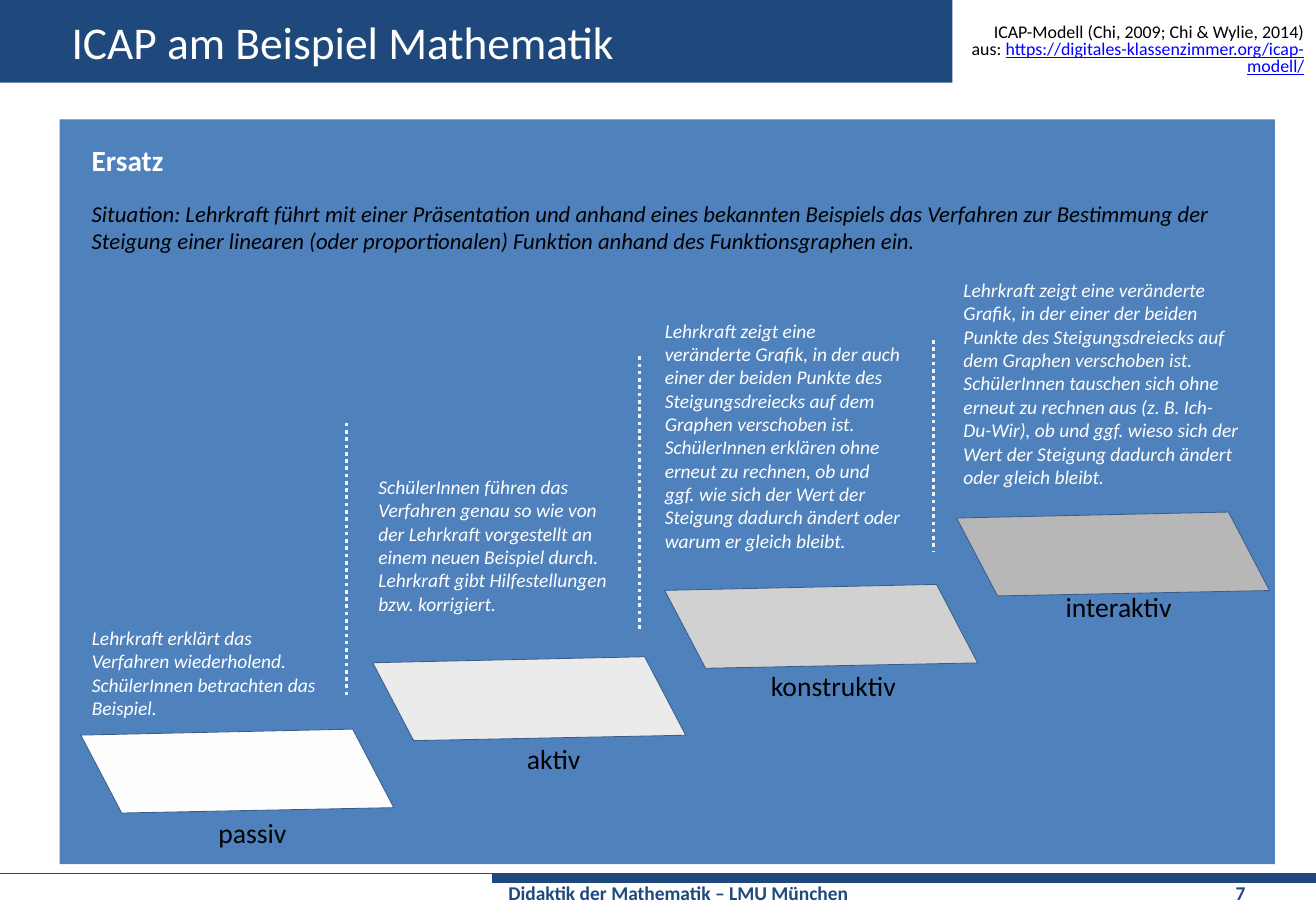
import dataclasses

import lxml.etree
import pptx
import pptx.dml.color
import pptx.enum.dml
import pptx.enum.shapes
import pptx.enum.text
import pptx.oxml.ns
import pptx.util

Pt = pptx.util.Pt
qn = pptx.oxml.ns.qn
ALIGN = pptx.enum.text.PP_ALIGN
ANCHOR = pptx.enum.text.MSO_ANCHOR
FONT = "Calibri"
SLIDE_WIDTH = 810.75
SLIDE_HEIGHT = 567
COLORS = {
    "navy": "1F497D",
    "panel": "4F81BD",
    "white": "FFFFFF",
    "black": "000000",
    "link": "0000FF",
    "dots": "F2F2F2",
    "edge": "385D8A",
    "passive": "FDFDFD",
    "active": "EBEBEB",
    "constructive": "D1D1D1",
    "interactive": "B7B7B7",
}
FIRST_STEP = (49.8, 453.1)
STEP_SHIFT = (179.85, -44.6)
TILE_CORNERS = [(0, 0), (167.5, -3.7), (192.8, 44.7), (25.2, 48)]

Box = tuple[float, float, float, float]


@dataclasses.dataclass
class Stage:
    label: str
    label_box: Box
    fill: str
    description: str
    description_box: Box


@dataclasses.dataclass
class Divider:
    x: float
    top: float
    bottom: float


STAGES = [
    Stage("passiv", (127.4, 499.5, 56.9, 28.1), "passive",
          "Lehrkraft erklärt das Verfahren wiederholend.\n"
          "SchülerInnen betrachten das Beispiel.",
          (49.5, 382.3, 160.6, 79.9)),
    Stage("aktiv", (317.5, 453.6, 48.2, 28.1), "active",
          "SchülerInnen führen das Verfahren genau so wie von der Lehrkraft "
          "vorgestellt an einem neuen Beispiel durch.\n"
          "Lehrkraft gibt Hilfestellungen bzw. korrigiert.",
          (226.1, 289.2, 160.6, 94.3)),
    Stage("konstruktiv", (467.8, 408.7, 92.2, 28.1), "constructive",
          "Lehrkraft zeigt eine veränderte Grafik, in der auch einer der beiden "
          "Punkte des Steigungsdreiecks auf dem Graphen verschoben ist.\n"
          "SchülerInnen erklären ohne erneut zu rechnen, ob und ggf. wie sich der "
          "Wert der Steigung dadurch ändert oder warum er gleich bleibt.",
          (402.5, 192.8, 160.6, 167)),
    Stage("interaktiv", (649.4, 360, 80.6, 28.1), "interactive",
          "Lehrkraft zeigt eine veränderte Grafik, in der einer der beiden Punkte "
          "des Steigungsdreiecks auf dem Graphen verschoben ist.\n"
          "SchülerInnen tauschen sich ohne erneut zu rechnen aus (z. B. Ich-Du-Wir), "
          "ob und ggf. wieso sich der Wert der Steigung dadurch ändert oder gleich "
          "bleibt.",
          (586.5, 167.8, 183.6, 138.2)),
]
DIVIDERS = [
    Divider(213.4, 260.6, 429.1),
    Divider(394, 219.6, 388.1),
    Divider(575.1, 209.5, 339.8),
]


def rgb(name: str) -> pptx.dml.color.RGBColor:
    return pptx.dml.color.RGBColor.from_string(COLORS[name])


def add_bar(slide, box: Box, fill: str) -> None:
    bar = slide.shapes.add_shape(
        pptx.enum.shapes.MSO_SHAPE.RECTANGLE, *map(Pt, box))
    bar.shadow.inherit = False
    bar.fill.solid()
    bar.fill.fore_color.rgb = rgb(fill)
    bar.line.fill.background()


def add_rule(slide, start: tuple[float, float], end: tuple[float, float],
             color: str, width: float, dotted: bool = False) -> None:
    rule = slide.shapes.add_connector(
        pptx.enum.shapes.MSO_CONNECTOR.STRAIGHT, *map(Pt, start + end))
    rule.line.color.rgb = rgb(color)
    rule.line.width = Pt(width)
    if dotted:
        rule.line.dash_style = pptx.enum.dml.MSO_LINE.ROUND_DOT
    lxml.etree.SubElement(rule._element.spPr, qn("a:effectLst"))


def add_tile(slide, index: int, fill: str) -> None:
    left, top = (a + index * b for a, b in zip(FIRST_STEP, STEP_SHIFT))
    corners = [(Pt(left + x), Pt(top + y)) for x, y in TILE_CORNERS]
    outline = slide.shapes.build_freeform(*corners[0])
    outline.add_line_segments(corners[1:], close=True)
    tile = outline.convert_to_shape()
    tile.shadow.inherit = False
    tile.fill.solid()
    tile.fill.fore_color.rgb = rgb(fill)
    tile.line.color.rgb = rgb("edge")
    tile.line.width = Pt(0.5)


def add_text(slide, text: str, box: Box, *, size: float, color: str = "black",
             bold: bool = False, italic: bool = False, wrap: bool = True,
             anchor=ANCHOR.TOP, align=ALIGN.LEFT, spacing: float = 1.0,
             hanging: float = 0, tab: float = 0, link: str = "") -> None:
    frame = slide.shapes.add_textbox(*map(Pt, box)).text_frame
    frame.word_wrap = wrap
    frame.vertical_anchor = anchor
    lines = text.split("\n")
    for number, content in enumerate(lines):
        paragraph = frame.add_paragraph() if number else frame.paragraphs[0]
        paragraph.alignment = align
        paragraph.line_spacing = spacing
        properties = paragraph._p.get_or_add_pPr()
        if hanging:
            properties.set("marL", str(Pt(hanging)))
            properties.set("indent", str(-Pt(hanging)))
        if tab:
            stops = lxml.etree.SubElement(properties, qn("a:tabLst"))
            lxml.etree.SubElement(stops, qn("a:tab"), pos=str(Pt(tab)), algn="l")
        pieces = [(content, color, False)]
        if link and number == len(lines) - 1:
            pieces.append((link, "link", True))
        for piece, piece_color, underlined in pieces:
            run = paragraph.add_run()
            run.text = piece
            run.font.name = FONT
            run.font.size = Pt(size)
            run.font.bold = bold
            run.font.italic = italic
            run.font.underline = underlined
            run.font.color.rgb = rgb(piece_color)


def main() -> None:
    deck = pptx.Presentation()
    deck.slide_width = Pt(SLIDE_WIDTH)
    deck.slide_height = Pt(SLIDE_HEIGHT)
    slide = deck.slides.add_slide(deck.slide_layouts[6])

    add_bar(slide, (0, 0, 586.8, 51), "navy")
    add_rule(slide, (0, 538.4), (SLIDE_WIDTH, 538.4), "navy", 1)
    add_bar(slide, (303.2, 538.4, SLIDE_WIDTH - 303.2, 5.8), "navy")
    add_text(slide, " Didaktik der Mathematik – LMU München\t7",
             (303.4, 539.3, 507.3, 22.3), size=12, color="navy", bold=True, tab=450.7)
    add_bar(slide, (36.8, 73.6, 748.6, 459), "panel")
    add_text(slide, "ICAP am Beispiel Mathematik", (37, 0, 544.3, 51),
             size=28, color="white", anchor=ANCHOR.MIDDLE)
    add_text(slide, "ICAP-Modell (Chi, 2009; Chi & Wylie, 2014)\naus: ",
             (581, 5.6, 229.7, 51), size=11, anchor=ANCHOR.MIDDLE,
             align=ALIGN.RIGHT, spacing=0.8, hanging=28.1,
             link="https://digitales-klassenzimmer.org/icap-modell/")
    add_text(slide, "Ersatz", (49.4, 84.2, 59, 28.8),
             size=18, color="white", bold=True, wrap=False)
    add_text(slide, "Situation: Lehrkraft führt mit einer Präsentation und anhand eines "
             "bekannten Beispiels das Verfahren zur Bestimmung der Steigung einer "
             "linearen (oder proportionalen) Funktion anhand des Funktionsgraphen ein.",
             (49.4, 119.3, 720.7, 41), size=14, italic=True)

    for divider in DIVIDERS:
        add_rule(slide, (divider.x, divider.top), (divider.x, divider.bottom),
                 "dots", 2.25, dotted=True)
    for index, stage in enumerate(STAGES):
        add_tile(slide, index, stage.fill)
        add_text(slide, stage.description, stage.description_box,
                 size=12, color="white", italic=True)
        add_text(slide, stage.label, stage.label_box, size=17, wrap=False)

    deck.save("out.pptx")


if __name__ == "__main__":
    main()
